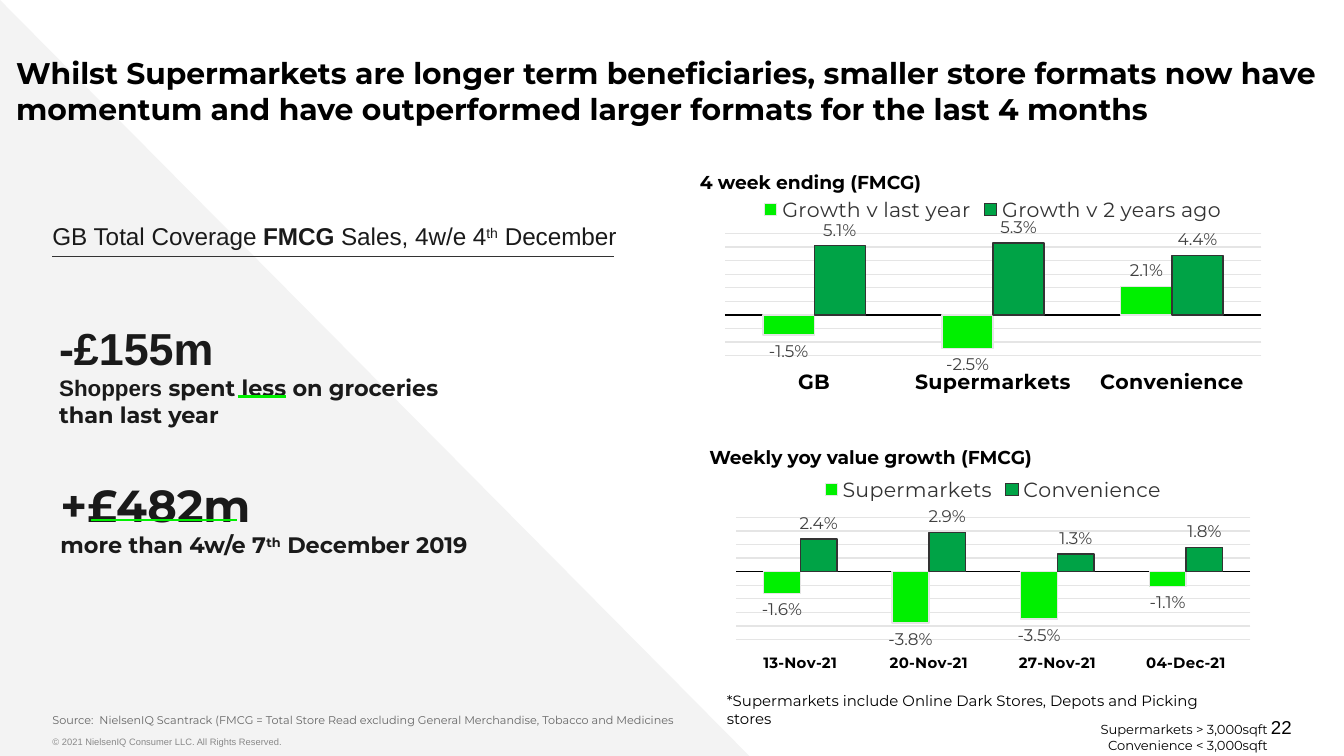
from lxml import etree
from pptx import Presentation
from pptx.chart.data import CategoryChartData as ChartData
from pptx.dml.color import RGBColor as RGB
from pptx.enum.chart import XL_CHART_TYPE as Kind, XL_LABEL_POSITION as Spot
from pptx.enum.chart import XL_LEGEND_POSITION as Side, XL_TICK_LABEL_POSITION as Tick
from pptx.enum.chart import XL_TICK_MARK as Mark
from pptx.enum.shapes import MSO_CONNECTOR as Conn, MSO_SHAPE as Shape
from pptx.enum.text import MSO_ANCHOR as Anchor, PP_ALIGN as Align
from pptx.oxml import parse_xml
from pptx.oxml.ns import nsdecls, qn
from pptx.util import Inches, Pt

COLORS = {
    "black": "000000", "ink": "1A1A1A", "dark": "333333", "label": "404040",
    "source": "666666", "small": "888888", "grid": "E5E5E5", "back": "F3F3F3",
    "lime": "00F000", "green": "00A346",
}
TONES = {name: RGB.from_string(code) for name, code in COLORS.items()}
SANS, MAIN = "Arial", "Montserrat"


def style(font, size, tone="black", face=MAIN, bold=False):
    font.size, font.name, font.bold = Pt(size), face, bold
    font.color.rgb = TONES[tone]


def text(lines, at, size, tone="black", face=MAIN, bold=False, inset=(0.1, 0.05, 0.1, 0.05),
         anchor=Anchor.TOP, align=Align.LEFT, wrap=True):
    """Add a text box; a line is a string or a list of (string, changes) runs."""
    frame = slide.shapes.add_textbox(*map(Inches, at)).text_frame
    frame.word_wrap, frame.vertical_anchor = wrap, anchor
    (frame.margin_left, frame.margin_top,
     frame.margin_right, frame.margin_bottom) = map(Inches, inset)
    for i, line in enumerate(lines):
        para = frame.add_paragraph() if i else frame.paragraphs[0]
        para.alignment = align
        for words, change in [(line, {})] if isinstance(line, str) else line:
            run = para.add_run()
            run.text = words
            look = {"size": size, "tone": tone, "face": face, "bold": bold} | change
            raised = look.pop("raised", False)
            style(run.font, **look)
            if raised:
                run.font._element.set("baseline", "30000")


prs = Presentation()
prs.slide_width = Inches(10)
prs.slide_height = prs.slide_width * 9 // 16
slide = prs.slides.add_slide(prs.slide_layouts[6])

# Background wedge
wedge = slide.shapes.add_shape(Shape.RIGHT_TRIANGLE, 0, 0, Inches(5.59), Inches(5.64))
wedge.shadow.inherit = False
wedge.fill.solid()
wedge.fill.fore_color.rgb = TONES["back"]
wedge.line.fill.background()

# Title and footer
flat, tall = (0, 0.05, 0, 0.05), (0, 0.1, 0, 0.1)
text(["Whilst Supermarkets are longer term beneficiaries, smaller store formats now have "
      "momentum and have outperformed larger formats for the last 4 months"],
     (0.12, 0.31, 9.88, 0.44), 16, bold=True, inset=tall)
text(["© 2021 NielsenIQ Consumer LLC. All Rights Reserved."],
     (0.39, 5.43, 5.54, 0.2), 5, "small", SANS, inset=flat)
text(["22"], (7.36, 5.26, 2.25, 0.3), 10, face=SANS, inset=flat,
     anchor=Anchor.MIDDLE, align=Align.RIGHT)
text(["Source:  NielsenIQ Scantrack (FMCG = Total Store Read excluding General Merchandise, "
      "Tobacco and Medicines"],
     (0.39, 5.31, 8.92, 0.2), 6, "source", inset=(0, 0, 0, 0.1), anchor=Anchor.BOTTOM)
text(["*Supermarkets include Online Dark Stores, Depots and Picking stores"],
     (5.31, 5.1, 3.93, 0.37), 8)
text(["Supermarkets > 3,000sqft", "Convenience < 3,000sqft"],
     (6.56, 5.32, 2.97, 0.34), 7, align=Align.RIGHT)

# Key figures
text([[("GB Total Coverage ", {}), ("FMCG", {"bold": True}), (" Sales, 4w/e 4", {}),
       ("th", {"raised": True}), (" December", {})]],
     (0.39, 1.6, 4.79, 0.3), 13, "ink", SANS, inset=flat)
text([[("-£155m", {"size": 24, "face": SANS})],
      [("Shoppers ", {"face": SANS}), ("spent less on groceries than last year", {})]],
     (0.44, 2.46, 3.03, 0.65), 12, "ink", bold=True, inset=(0, 0, 0, 0), anchor=Anchor.MIDDLE)
text([[("+£482m", {"size": 24})],
      [("more than 4w/e 7", {}), ("th", {"raised": True}), (" December 2019", {})]],
     (0.45, 3.63, 3.45, 0.65), 12, "ink", bold=True, inset=(0, 0, 0, 0.2), anchor=Anchor.MIDDLE)

for left, right, y, tone, width in [(0.39, 4.57, 1.91, "dark", 0.75),
                                    (0.68, 1.76, 3.87, "lime", 1.5),
                                    (1.77, 2.13, 2.95, "lime", 1.5)]:
    rule = slide.shapes.add_connector(Conn.STRAIGHT, *map(Inches, (left, y, right, y)))
    rule.line.color.rgb, rule.line.width = TONES[tone], Pt(width)
    etree.SubElement(rule._element.spPr, qn("a:effectLst"))

# Growth charts
charts = [
    {"title": "4 week ending (FMCG)", "head": (5.11, 1.22, 1.87, 0.27), "top": 1.35,
     "cats": ["GB", "Supermarkets", "Convenience"], "size": 11,
     "range": (-0.03, 0.06), "plot": (0.02, 0.24, 0.96, 0.56),
     "rows": {"Growth v last year": (-0.015, -0.025, 0.021),
              "Growth v 2 years ago": (0.051, 0.053, 0.044)}},
    {"title": "Weekly yoy value growth (FMCG)", "head": (5.18, 3.27, 2.7, 0.27), "top": 3.43,
     "cats": ["13-Nov-21", "20-Nov-21", "27-Nov-21", "04-Dec-21"], "size": 8,
     "range": (-0.05, 0.04), "plot": (0.04, 0.26, 0.92, 0.56),
     "rows": {"Supermarkets": (-0.016, -0.038, -0.035, -0.011),
              "Convenience": (0.024, 0.029, 0.013, 0.018)}},
]
for item in charts:
    text([item["title"]], item["head"], 10, bold=True, wrap=False)
    data = ChartData(number_format="0.0%")
    data.categories = item["cats"]
    for name, values in item["rows"].items():
        data.add_series(name, values)
    chart = slide.shapes.add_chart(Kind.COLUMN_CLUSTERED, Inches(5.31), Inches(item["top"]),
                                   Inches(4.16), Inches(1.62), data).chart
    style(chart.font, 10, face=SANS)
    chart.has_title = False
    chart.has_legend = True
    chart.legend.position, chart.legend.include_in_layout = Side.TOP, False
    style(chart.legend.font, 11, "dark")

    cat, val = chart.category_axis, chart.value_axis
    cat.tick_label_position = Tick.LOW
    cat.major_tick_mark = Mark.NONE
    cat.format.line.color.rgb, cat.format.line.width = TONES["black"], Pt(0.75)
    style(cat.tick_labels.font, item["size"], bold=True)
    val.minimum_scale, val.maximum_scale = item["range"]
    val.major_unit = 0.01
    val.has_major_gridlines = True
    grid = val.major_gridlines.format.line
    grid.color.rgb, grid.width = TONES["grid"], Pt(0.75)
    val.visible = False

    plot = chart.plots[0]
    plot.gap_width, plot.overlap, plot.vary_by_categories = 150, 0, False
    for bars, fill, edge in zip(plot.series, ("lime", "green"), ("grid", "dark")):
        bars.invert_if_negative = False
        bars.format.fill.solid()
        bars.format.fill.fore_color.rgb = TONES[fill]
        bars.format.line.color.rgb, bars.format.line.width = TONES[edge], Pt(0.75)
        tags = bars.data_labels
        tags.show_value, tags.position = True, Spot.OUTSIDE_END
        tags.number_format, tags.number_format_is_linked = "0.0%", False
        style(tags.font, 9, "label")

    # Fixed inner plot area
    area = chart._chartSpace.find(".//" + qn("c:plotArea"))
    for old in area.findall(qn("c:layout")):
        area.remove(old)
    sizes = "".join(f'<c:{key} val="{size}"/>' for key, size in zip("xywh", item["plot"]))
    area.insert(0, parse_xml(
        f'<c:layout {nsdecls("c")}><c:manualLayout><c:layoutTarget val="inner"/>'
        f'<c:xMode val="edge"/><c:yMode val="edge"/>{sizes}</c:manualLayout></c:layout>'))

prs.save("out.pptx")
